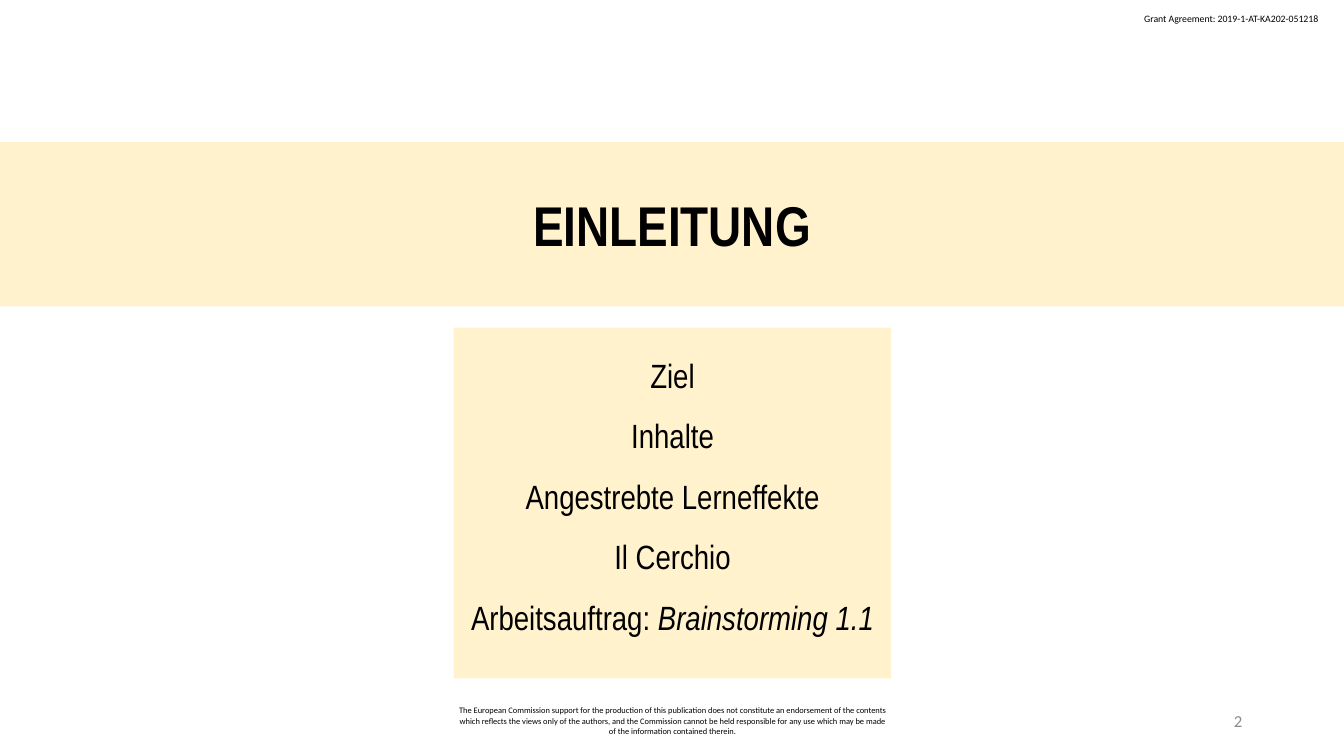
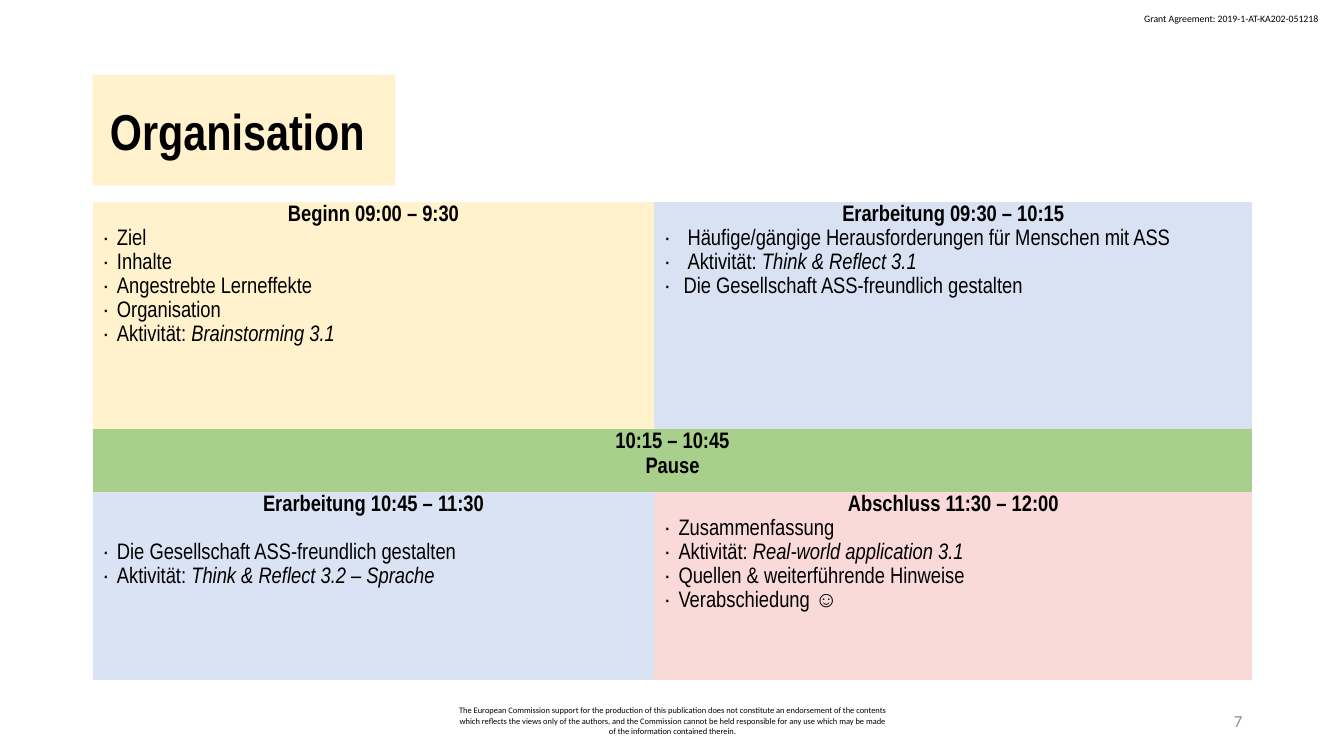
from lxml.etree import SubElement
from pptx import Presentation
from pptx.dml.color import RGBColor
from pptx.enum.shapes import MSO_SHAPE
from pptx.enum.text import MSO_ANCHOR, PP_ALIGN
from pptx.oxml.ns import qn
from pptx.util import Inches, Pt

BLACK = RGBColor(0x00, 0x00, 0x00)
GREY = RGBColor(0x8C, 0x8C, 0x8C)
CREAM = RGBColor(0xFF, 0xF2, 0xCC)
BLUE = RGBColor(0xD8, 0xE2, 0xF3)
LIGHT_BLUE = RGBColor(0xDA, 0xE3, 0xF3)
GREEN = RGBColor(0xA8, 0xD0, 0x8C)
ROSE = RGBColor(0xF9, 0xDA, 0xD9)

HEADING_FONT = "Arial Narrow"
SMALL_FONT = "Calibri"
PLAIN_TABLE_STYLE = "{2D5ABB26-0587-4C30-8999-92F81FD0307C}"
TABLE_LINE_SPACING = 1.15
BULLET_INDENT = 0.14

GRANT = "Grant Agreement: 2019-1-AT-KA202-051218"
DISCLAIMER = (
    "The European Commission support for the production of this publication does not "
    "constitute an endorsement of the contents which reflects the views only of the "
    "authors, and the Commission cannot be held responsible for any use which may be "
    "made of the information contained therein."
)

AGENDA = [
    ("Ziel", ""),
    ("Inhalte", ""),
    ("Angestrebte Lerneffekte", ""),
    ("Il Cerchio", ""),
    ("Arbeitsauftrag: ", "Brainstorming 1.1"),
]

OPENING = [
    ("Ziel", ""),
    ("Inhalte", ""),
    ("Angestrebte Lerneffekte", ""),
    ("Organisation", ""),
    ("Aktivität: ", "Brainstorming 3.1"),
]
FIRST_SESSION = [
    ("Häufige/gängige Herausforderungen für Menschen mit ASS", ""),
    ("Aktivität: ", "Think & Reflect 3.1"),
    ("Die Gesellschaft ASS-freundlich gestalten", ""),
]
SECOND_SESSION = [
    ("Die Gesellschaft ASS-freundlich gestalten", ""),
    ("Aktivität: ", "Think & Reflect 3.2 – Sprache"),
]
CLOSING = [
    ("Zusammenfassung", ""),
    ("Aktivität: ", "Real-world application 3.1"),
    ("Quellen & weiterführende Hinweise", ""),
    ("Verabschiedung ☺", ""),
]


def style_font(font, size, name=HEADING_FONT, color=BLACK, bold=False):
    """Set the face, size, weight and colour of a font."""
    font.name = name
    font.size = Pt(size)
    font.bold = bold
    font.color.rgb = color


def write_paragraph(paragraph, text, italic_text="", size=16, bold=False, align=PP_ALIGN.LEFT):
    """Write a paragraph with an optional italic ending."""
    paragraph.text = text
    if italic_text:
        paragraph.add_run().text = italic_text
        paragraph.runs[-1].font.italic = True
    paragraph.alignment = align
    for run in paragraph.runs:
        style_font(run.font, size, bold=bold)


def paragraph_at(text_frame, index):
    """Return the first paragraph or append a new one."""
    return text_frame.add_paragraph() if index else text_frame.paragraphs[0]


def add_bullet(paragraph, indent):
    """Give a paragraph a small black dot with a hanging indent."""
    properties = paragraph._p.get_or_add_pPr()
    properties.set("marL", str(Inches(indent)))
    properties.set("indent", str(-Inches(indent)))
    bullet_color = SubElement(properties, qn("a:buClr"))
    SubElement(bullet_color, qn("a:srgbClr")).set("val", str(BLACK))
    SubElement(properties, qn("a:buFont")).set("typeface", HEADING_FONT)
    SubElement(properties, qn("a:buChar")).set("char", "∙")


def add_label(slide, box, text, size, color=BLACK, align=PP_ALIGN.LEFT, wrap=True):
    """Add a line of small print in a box."""
    text_frame = slide.shapes.add_textbox(*map(Inches, box)).text_frame
    text_frame.word_wrap = wrap
    text_frame.vertical_anchor = MSO_ANCHOR.MIDDLE if wrap else MSO_ANCHOR.TOP
    text_frame.text = text
    paragraph = text_frame.paragraphs[0]
    paragraph.alignment = align
    style_font(paragraph.runs[0].font, size, SMALL_FONT, color)


def add_panel(slide, box, anchor=MSO_ANCHOR.MIDDLE, right_inset=0.13):
    """Add a cream rectangle and return its text frame."""
    shape = slide.shapes.add_shape(MSO_SHAPE.RECTANGLE, *map(Inches, box))
    shape.shadow.inherit = False
    shape.fill.solid()
    shape.fill.fore_color.rgb = CREAM
    shape.line.fill.background()
    text_frame = shape.text_frame
    text_frame.word_wrap = True
    text_frame.vertical_anchor = anchor
    text_frame.margin_left = Inches(0.13)
    text_frame.margin_right = Inches(right_inset)
    text_frame.margin_top = text_frame.margin_bottom = Inches(0.07)
    return text_frame


def add_title(slide, box, text, size, right_inset=0.13):
    """Add a bold centred title on a cream panel."""
    text_frame = add_panel(slide, box, right_inset=right_inset)
    write_paragraph(text_frame.paragraphs[0], text, size=size, bold=True, align=PP_ALIGN.CENTER)


def add_base_slide(presentation, number):
    """Add a blank slide with the grant line, disclaimer and number."""
    slide = presentation.slides.add_slide(presentation.slide_layouts[6])
    add_label(slide, (11.25, 0.08, 1.97, 0.22), GRANT, 7, wrap=False)
    add_label(slide, (4.42, 6.95, 4.5, 0.4), DISCLAIMER, 6, align=PP_ALIGN.CENTER)
    add_label(slide, (9.42, 6.95, 3, 0.4), str(number), 12, GREY, PP_ALIGN.RIGHT)
    return slide


def add_agenda(slide, box, entries):
    """Add the centred list of topics."""
    text_frame = add_panel(slide, box, MSO_ANCHOR.TOP)
    for index, (text, italic_text) in enumerate(entries):
        paragraph = paragraph_at(text_frame, index)
        write_paragraph(paragraph, text, italic_text, 24, align=PP_ALIGN.CENTER)
        paragraph.line_spacing = 1.5


def fill_cell(cell, color, headings, entries=(), indents=(), gap=0):
    """Fill a cell with bold headings and a bulleted list below them."""
    cell.fill.solid()
    cell.fill.fore_color.rgb = color
    cell.margin_left = cell.margin_right = Inches(0.1)
    cell.margin_top = cell.margin_bottom = 0
    text_frame = cell.text_frame
    for index, heading in enumerate(headings):
        paragraph = paragraph_at(text_frame, index)
        write_paragraph(paragraph, heading, bold=True, align=PP_ALIGN.CENTER)
    for index, (text, italic_text) in enumerate(entries):
        paragraph = text_frame.add_paragraph()
        add_bullet(paragraph, indents[index] if indents else BULLET_INDENT)
        write_paragraph(paragraph, text, italic_text)
        if gap and index == 0:
            paragraph.space_before = Pt(gap)
    for paragraph in text_frame.paragraphs:
        paragraph.line_spacing = TABLE_LINE_SPACING


def add_schedule(slide, box, column_widths, row_heights):
    """Add the timetable with a break across both columns."""
    frame = slide.shapes.add_table(len(row_heights), len(column_widths), *map(Inches, box))
    for style in frame.element.iter(qn("a:tableStyleId")):
        style.text = PLAIN_TABLE_STYLE
    table = frame.table
    table.first_row = table.horz_banding = False
    for column, width in zip(table.columns, column_widths):
        column.width = Inches(width)
    for row, height in zip(table.rows, row_heights):
        row.height = Inches(height)
    table.cell(1, 0).merge(table.cell(1, 1))
    fill_cell(table.cell(0, 0), CREAM, ["Beginn 09:00 – 9:30"], OPENING)
    fill_cell(table.cell(0, 1), BLUE, ["Erarbeitung 09:30 – 10:15"], FIRST_SESSION,
              indents=(0.23, 0.23, 0.19))
    fill_cell(table.cell(1, 0), GREEN, ["10:15 – 10:45", "Pause"])
    fill_cell(table.cell(2, 0), LIGHT_BLUE, ["Erarbeitung 10:45 – 11:30"], SECOND_SESSION, gap=17.3)
    fill_cell(table.cell(2, 1), ROSE, ["Abschluss 11:30 – 12:00"], CLOSING)


def build_introduction(presentation):
    """Build the section slide with its topics."""
    slide = add_base_slide(presentation, 2)
    add_title(slide, (0, 1.41, 13.33, 1.63), "EINLEITUNG", 40)
    add_agenda(slide, (4.5, 3.25, 4.34, 3.48), AGENDA)


def build_organisation(presentation):
    """Build the slide with the timetable."""
    slide = add_base_slide(presentation, 7)
    add_title(slide, (0.92, 0.74, 3, 1.1), "Organisation", 36, right_inset=0.26)
    add_schedule(slide, (0.92, 2, 11.5, 4.75), (5.57, 5.93), (2.26, 0.62, 1.87))


def main():
    """Build and save the presentation."""
    presentation = Presentation()
    presentation.slide_width = Inches(13.33)
    presentation.slide_height = Inches(7.5)
    build_introduction(presentation)
    build_organisation(presentation)
    presentation.save("out.pptx")


if __name__ == "__main__":
    main()
